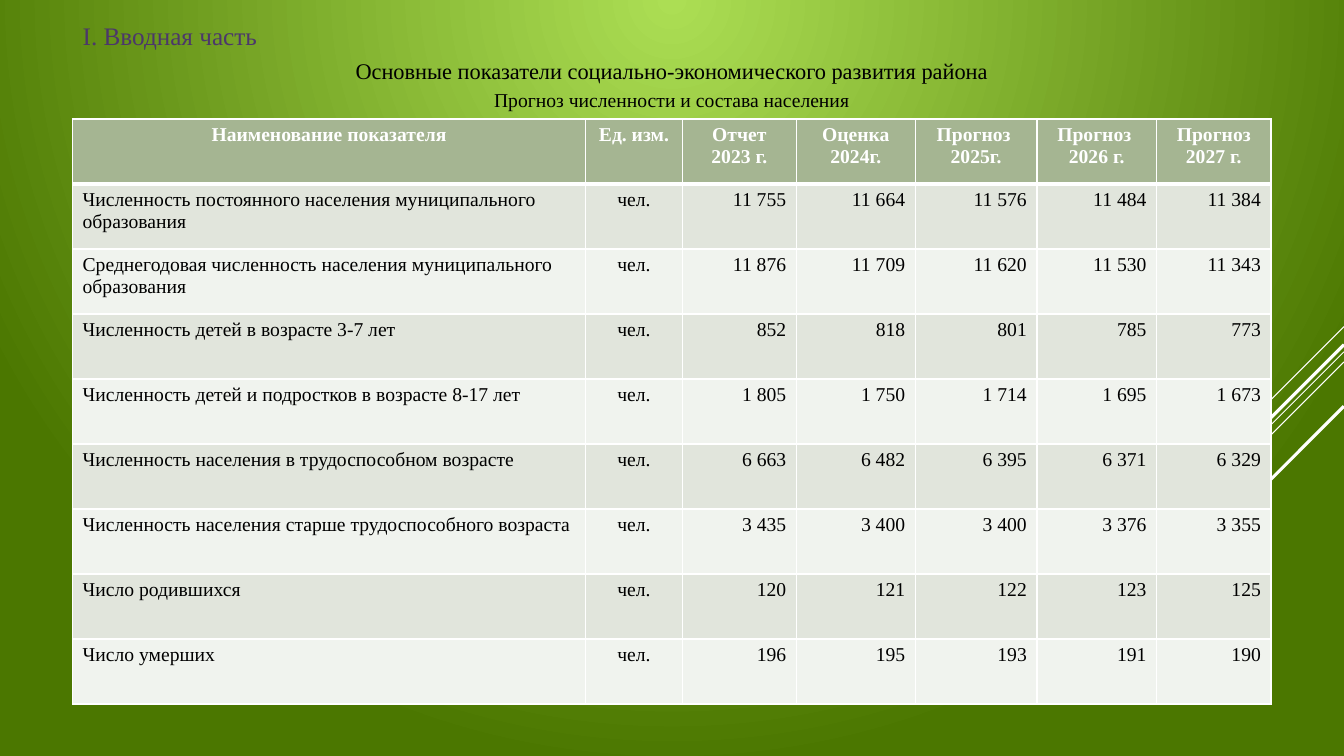
import dataclasses

import lxml.etree
import pptx
import pptx.dml.color
import pptx.enum.shapes
import pptx.enum.text
import pptx.oxml.ns
import pptx.presentation
import pptx.shapes.autoshape
import pptx.slide
import pptx.table
import pptx.text.text
import pptx.util

Pt = pptx.util.Pt
Align = pptx.enum.text.PP_ALIGN
Anchor = pptx.enum.text.MSO_ANCHOR
qn = pptx.oxml.ns.qn

COLOURS = {
    "glow": "ACDE54",
    "edge": "4B7700",
    "white": "FFFFFF",
    "black": "000000",
    "title": "4C376B",
    "header": "A5B592",
    "odd": "E1E5DC",
    "even": "F0F3EE",
}
FONT = "Times New Roman"
SLIDE_WIDTH, SLIDE_HEIGHT = 960, 540
LEFT, WIDTH = 51.84, 856.08
HEADING_HEIGHT = 23
TABLE_TOP = 85
ROW_HEIGHT = 46.45
THIN, THICK = 0.96, 3
COLUMN_WIDTHS = [366.5, 69.1, 81.4, 85, 86.9, 85.5, 81.7]


@dataclasses.dataclass(frozen=True)
class Ray:
    top: float
    run: float
    weight: float


@dataclasses.dataclass(frozen=True)
class Heading:
    text: str
    top: float
    size: float
    align: Align
    colour: str
    anchor: Anchor = Anchor.TOP
    space_before: float = 0
    line_spacing: float = 1.0


@dataclasses.dataclass(frozen=True)
class Indicator:
    name: str
    values: tuple[str, ...]
    unit: str = "чел."


RAYS = [
    Ray(233.3, 72, 0.75),
    Ray(251.3, 234.7, 0.75),
    Ray(258.5, 149, 0.75),
    Ray(246.2, 137.9, 2.25),
    Ray(290.2, 100, 2.25),
]
TITLE = Heading("I. Вводная часть", 13.7, 18, Align.LEFT, "title", Anchor.MIDDLE)
SUBHEADINGS = [
    Heading("Основные показатели социально-экономического развития района",
            37.4, 16, Align.CENTER, "black", space_before=6),
    Heading("Прогноз численности и состава населения",
            61.2, 14, Align.CENTER, "black", space_before=6, line_spacing=0.9),
]
HEADER = [
    "Наименование показателя", "Ед. изм.", "Отчет 2023 г.", "Оценка\n2024г.",
    "Прогноз \n2025г.", "Прогноз \n2026 г.", "Прогноз 2027 г.",
]
INDICATORS = [
    Indicator("Численность постоянного населения муниципального образования",
              ("11 755", "11 664", "11 576", "11 484", "11 384")),
    Indicator("Среднегодовая численность населения муниципального образования",
              ("11 876", "11 709", "11 620", "11 530", "11 343")),
    Indicator("Численность детей в возрасте 3-7 лет",
              ("852", "818", "801", "785", "773")),
    Indicator("Численность детей и подростков в возрасте 8-17 лет",
              ("1 805", "1 750", "1 714", "1 695", "1 673")),
    Indicator("Численность населения в трудоспособном возрасте",
              ("6 663", "6 482", "6 395", "6 371", "6 329")),
    Indicator("Численность населения старше трудоспособного возраста",
              ("3 435", "3 400", "3 400", "3 376", "3 355")),
    Indicator("Число родившихся", ("120", "121", "122", "123", "125")),
    Indicator("Число умерших", ("196", "195", "193", "191", "190")),
]


def rgb(colour: str) -> pptx.dml.color.RGBColor:
    return pptx.dml.color.RGBColor.from_string(COLOURS[colour])


def add_text(paragraph: pptx.text.text._Paragraph, text: str, size: float,
             colour: str, align: Align, bold: bool = False) -> None:
    paragraph.alignment = align
    run = paragraph.add_run()
    run.text = text
    run.font.name = FONT
    run.font.size = Pt(size)
    run.font.bold = bold
    run.font.color.rgb = rgb(colour)


def paint_background(slide: pptx.slide.Slide) -> None:
    fill = slide.background.fill
    fill.gradient()
    for stop, colour in zip(fill.gradient_stops, ("glow", "edge")):
        stop.color.rgb = rgb(colour)
    gradient = slide.element.xpath(".//p:bg//a:gradFill")[0]
    gradient.remove(gradient.find(qn("a:lin")))
    circle = lxml.etree.SubElement(gradient, qn("a:path"), path="circle")
    lxml.etree.SubElement(circle, qn("a:fillToRect"),
                          l="50000", t="0", r="50000", b="100000")


def draw_ray(slide: pptx.slide.Slide, ray: Ray) -> None:
    line = slide.shapes.add_connector(
        pptx.enum.shapes.MSO_CONNECTOR.STRAIGHT, Pt(SLIDE_WIDTH), Pt(ray.top),
        Pt(SLIDE_WIDTH - ray.run), Pt(ray.top + ray.run))
    line.line.color.rgb = rgb("white")
    line.line.width = Pt(ray.weight)
    lxml.etree.SubElement(line.element.spPr, qn("a:effectLst"))


def write_heading(shape: pptx.shapes.autoshape.Shape, heading: Heading) -> None:
    shape.left, shape.top = Pt(LEFT), Pt(heading.top)
    shape.width, shape.height = Pt(WIDTH), Pt(HEADING_HEIGHT)
    frame = shape.text_frame
    frame.word_wrap = True
    frame.auto_size = pptx.enum.text.MSO_AUTO_SIZE.NONE
    frame.vertical_anchor = heading.anchor
    paragraph = frame.paragraphs[0]
    paragraph.space_before = Pt(heading.space_before)
    paragraph.line_spacing = heading.line_spacing
    add_text(paragraph, heading.text, heading.size, heading.colour, heading.align)


def border_cell(cell: pptx.table._Cell, top: float, bottom: float) -> None:
    properties = cell._tc.get_or_add_tcPr()
    edges = {"a:lnL": THIN, "a:lnR": THIN, "a:lnT": top, "a:lnB": bottom}
    for position, (edge, weight) in enumerate(edges.items()):
        border = lxml.etree.Element(qn(edge), w=str(int(Pt(weight))))
        paint = lxml.etree.SubElement(border, qn("a:solidFill"))
        lxml.etree.SubElement(paint, qn("a:srgbClr"), val=COLOURS["white"])
        properties.insert(position, border)


def fill_cell(cell: pptx.table._Cell, text: str, row: int, column: int) -> None:
    is_header = row == 0
    cell.fill.solid()
    cell.fill.fore_color.rgb = rgb(
        "header" if is_header else "odd" if row % 2 else "even")
    border_cell(cell, THICK if row == 1 else THIN, THICK if is_header else THIN)
    if is_header or column == 1:
        align = Align.CENTER
    else:
        align = Align.LEFT if column == 0 else Align.RIGHT
    frame = cell.text_frame
    for number, line in enumerate(text.split("\n")):
        paragraph = frame.add_paragraph() if number else frame.paragraphs[0]
        add_text(paragraph, line, 14, "white" if is_header else "black",
                 align, is_header)


def draw_table(slide: pptx.slide.Slide) -> None:
    rows = [HEADER] + [[item.name, item.unit, *item.values] for item in INDICATORS]
    population = slide.shapes.add_table(
        len(rows), len(HEADER), Pt(LEFT), Pt(TABLE_TOP), Pt(WIDTH),
        Pt(ROW_HEIGHT * len(rows))).table
    for column, width in zip(population.columns, COLUMN_WIDTHS):
        column.width = Pt(width)
    for row, texts in enumerate(rows):
        population.rows[row].height = Pt(ROW_HEIGHT)
        for column, text in enumerate(texts):
            fill_cell(population.cell(row, column), text, row, column)


def main() -> None:
    presentation = pptx.Presentation()
    presentation.slide_width = Pt(SLIDE_WIDTH)
    presentation.slide_height = Pt(SLIDE_HEIGHT)
    slide = presentation.slides.add_slide(presentation.slide_layouts[5])
    paint_background(slide)
    for ray in RAYS:
        draw_ray(slide, ray)
    write_heading(slide.shapes.title, TITLE)
    for heading in SUBHEADINGS:
        write_heading(slide.shapes.add_textbox(0, 0, 0, 0), heading)
    draw_table(slide)
    presentation.save("out.pptx")


if __name__ == "__main__":
    main()
